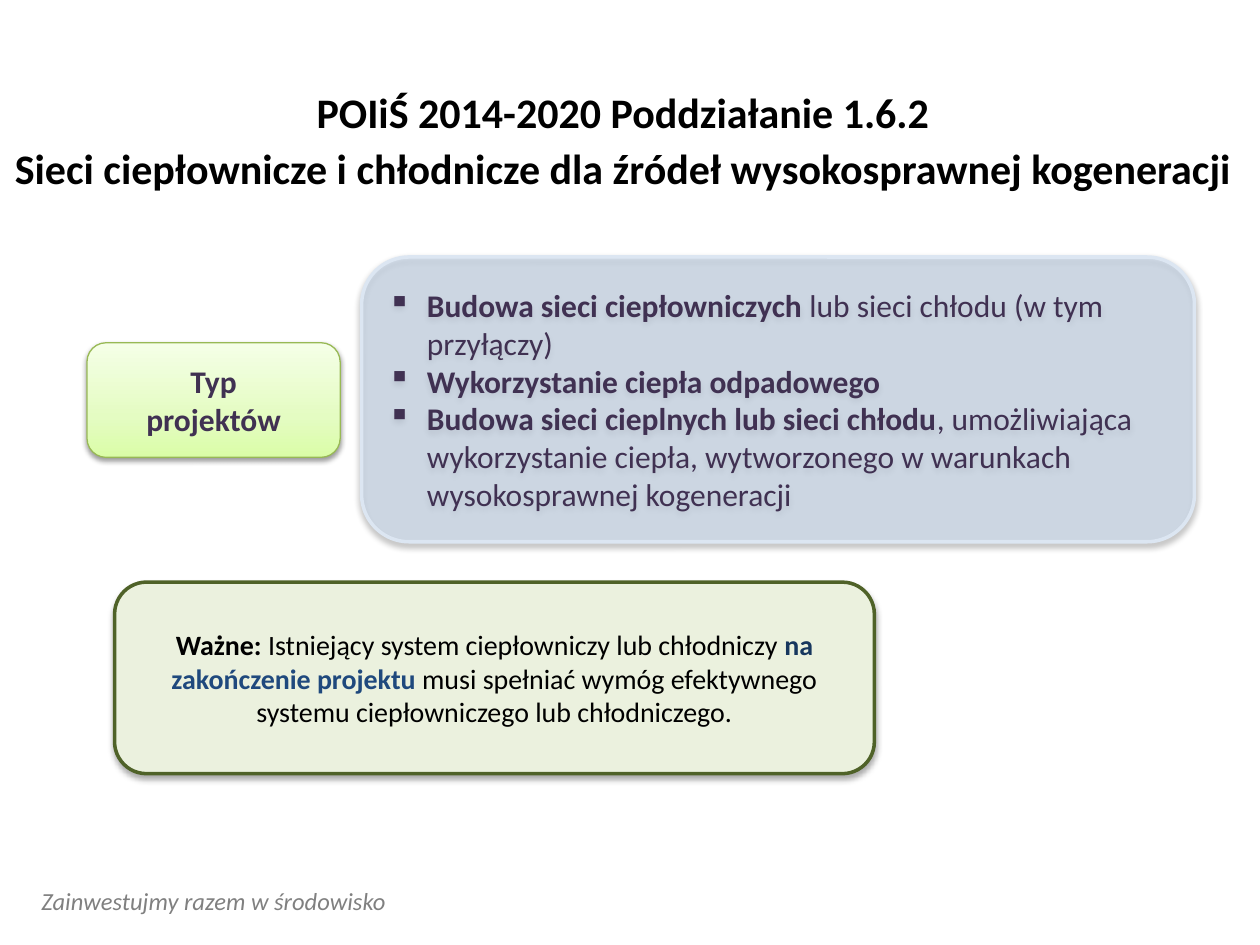
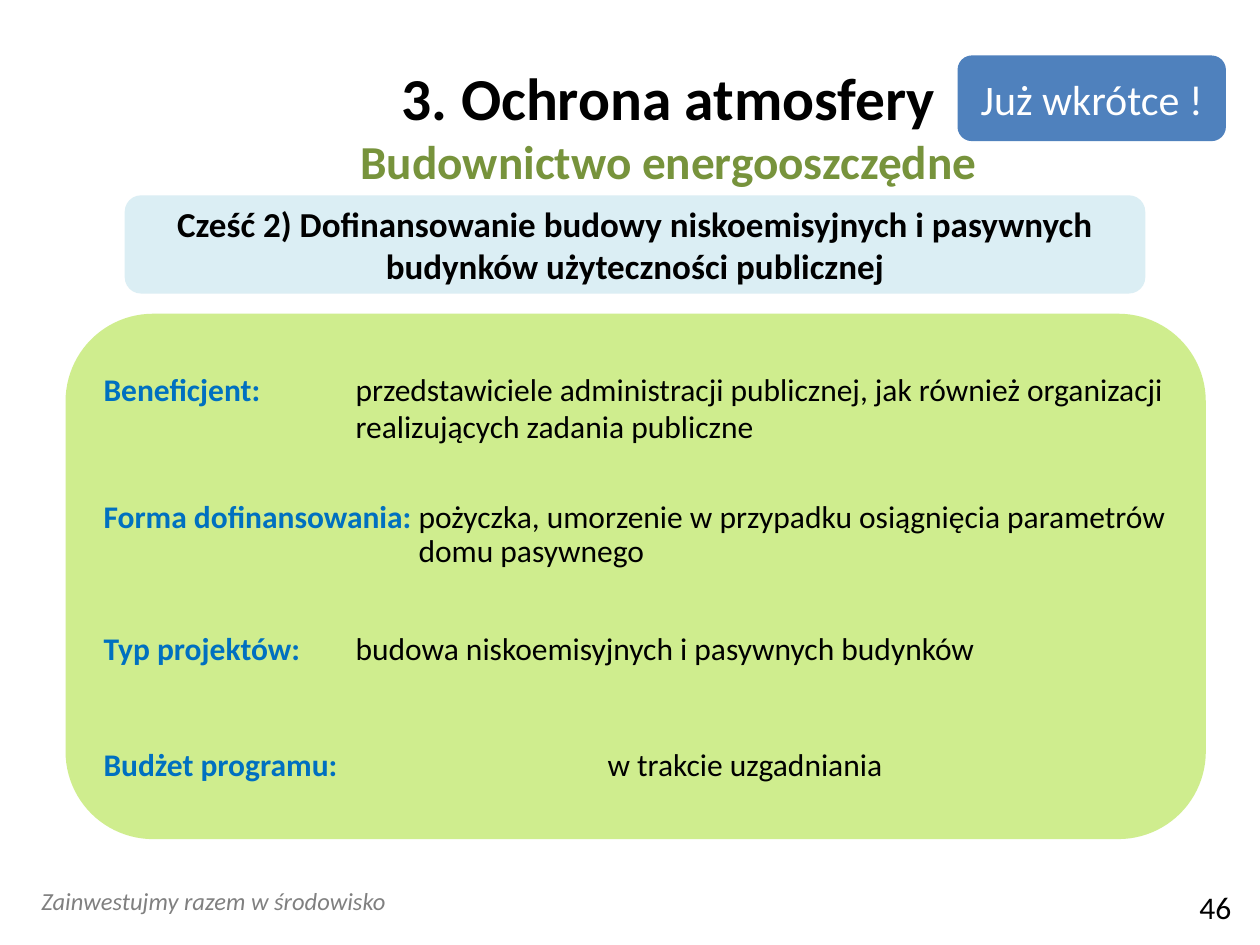
from copy import deepcopy

from lxml.etree import SubElement
from pptx import Presentation
from pptx.dml.color import RGBColor
from pptx.enum.shapes import MSO_SHAPE
from pptx.enum.text import MSO_ANCHOR, MSO_AUTO_SIZE, PP_ALIGN
from pptx.oxml.ns import qn
from pptx.util import Inches, Pt

BLACK = RGBColor(0x00, 0x00, 0x00)
WHITE = RGBColor(0xFF, 0xFF, 0xFF)
GREY = RGBColor(0x80, 0x80, 0x80)
PLUM = RGBColor(0x40, 0x31, 0x52)
NAVY = RGBColor(0x17, 0x37, 0x5E)
DARK_BLUE = RGBColor(0x1F, 0x49, 0x7D)
LABEL_BLUE = RGBColor(0x00, 0x70, 0xC0)
BADGE_BLUE = RGBColor(0x4F, 0x81, 0xBD)
MIST = RGBColor(0xC6, 0xD9, 0xF1)
MIST_EDGE = RGBColor(0xDC, 0xE6, 0xF2)
ICE = RGBColor(0xDB, 0xEE, 0xF4)
OLIVE = RGBColor(0x77, 0x93, 0x3C)
MOSS = RGBColor(0x4F, 0x62, 0x28)
SAGE = RGBColor(0xEB, 0xF1, 0xDE)
LIME = RGBColor(0xAF, 0xE1, 0x3F)
LEAF_EDGE = RGBColor(0x98, 0xB9, 0x55)
LEAF_STOPS = [
    (0, RGBColor(0xDA, 0xFD, 0xA7)),
    (0.35, RGBColor(0xE4, 0xFC, 0xC2)),
    (1, RGBColor(0xF5, 0xFF, 0xE7)),
]
SOFT_SHADOW = (38, 3.1, 1.6)
DEEP_SHADOW = (32, 3.5, 2.2)


class Deck:
    FONT = "Calibri"
    COLUMNS, ROWS = 100, 75
    MOTTO = "Zainwestujmy razem w środowisko"

    def __init__(self):
        self.deck = Presentation()
        self.deck.slide_width, self.deck.slide_height = Inches(10), Inches(7.5)
        self.slide = None

    def place(self, left, top, width, height):
        column = self.deck.slide_width / self.COLUMNS
        row = self.deck.slide_height / self.ROWS
        return [round(n) for n in (left * column, top * row, width * column, height * row)]

    def new_slide(self):
        self.slide = self.deck.slides.add_slide(self.deck.slide_layouts[5])
        self.label((2.3, 69.8, 42.2, 3.4), self.MOTTO, 14, GREY, italic=True)

    def style(self, run, size, color=BLACK, bold=False, italic=False):
        font = run.font
        font.name, font.size = self.FONT, Pt(size)
        font.bold, font.italic = bold, italic
        font.color.rgb = color

    def paragraph(self, frame, runs, size, align=PP_ALIGN.LEFT, hang=0, bullet=None,
                  before=0, after=0, spacing=1.0):
        first = not frame.paragraphs[0].runs
        line = frame.paragraphs[0] if first else frame.add_paragraph()
        line.alignment, line.line_spacing = align, spacing
        line.space_before, line.space_after = Pt(before), Pt(after)
        properties = line._p.get_or_add_pPr()
        if hang:
            properties.set("marL", str(Inches(hang)))
            properties.set("indent", str(-Inches(hang)))
        if bullet:
            SubElement(properties, qn("a:buChar")).set("char", bullet)
        for text, color, bold in runs:
            run = line.add_run()
            run.text = text
            self.style(run, size, color, bold)

    def title(self, box, lines, anchor, **layout):
        heading = self.slide.shapes.title
        heading.left, heading.top, heading.width, heading.height = self.place(*box)
        frame = heading.text_frame
        frame.word_wrap, frame.auto_size = True, MSO_AUTO_SIZE.NONE
        frame.vertical_anchor = anchor
        for text, size, color in lines:
            self.paragraph(frame, [(text, color, True)], size, PP_ALIGN.CENTER, **layout)

    def label(self, box, text, size, color=BLACK, italic=False):
        frame = self.slide.shapes.add_textbox(*self.place(*box)).text_frame
        frame.word_wrap = True
        frame.text = text
        self.style(frame.paragraphs[0].runs[0], size, color, italic=italic)

    def panel(self, box, fill, edge=None, edge_width=2, opacity=None, shadow=None):
        shape = self.slide.shapes.add_shape(MSO_SHAPE.ROUNDED_RECTANGLE, *self.place(*box))
        if isinstance(fill, list):
            self.gradient(shape, fill)
        else:
            shape.fill.solid()
            shape.fill.fore_color.rgb = fill
        if opacity:
            tint = shape.element.spPr.find(".//" + qn("a:srgbClr"))
            SubElement(tint, qn("a:alpha")).set("val", str(opacity * 1000))
        if edge is None:
            shape.line.fill.background()
        else:
            shape.line.color.rgb, shape.line.width = edge, Pt(edge_width)
        shape.shadow.inherit = False
        if shadow:
            self.cast_shadow(shape, *shadow)
        frame = shape.text_frame
        frame.word_wrap, frame.vertical_anchor = True, MSO_ANCHOR.MIDDLE
        return frame

    def gradient(self, shape, stops):
        shape.fill.gradient()
        shape.fill.gradient_angle = 90
        stop_list = shape.element.spPr.find(".//" + qn("a:gsLst"))
        stop_list.insert(1, deepcopy(stop_list[0]))
        for stop, (position, color) in zip(shape.fill.gradient_stops, stops):
            stop.position, stop.color.rgb = position, color

    def cast_shadow(self, shape, opacity, blur, distance):
        effects = shape.element.spPr.find(qn("a:effectLst"))
        outer = SubElement(effects, qn("a:outerShdw"), blurRad=str(Pt(blur)),
                           dist=str(Pt(distance)), dir="5400000", rotWithShape="0")
        tint = SubElement(outer, qn("a:srgbClr"), val=str(BLACK))
        SubElement(tint, qn("a:alpha"), val=str(opacity * 1000))


def heating_networks(deck):
    deck.new_slide()
    headings = [
        "POIiŚ 2014-2020 Poddziałanie 1.6.2",
        "Sieci ciepłownicze i chłodnicze dla źródeł wysokosprawnej kogeneracji",
    ]
    deck.title((0, 6.8, 98.9, 9.1), [(text, 24, BLACK) for text in headings],
               MSO_ANCHOR.TOP, spacing=0.9, after=6)

    project_type = deck.panel((6.9, 27.2, 20.1, 9.1), LEAF_STOPS, LEAF_EDGE, 0.75,
                              shadow=SOFT_SHADOW)
    for word in ("Typ", "projektów"):
        deck.paragraph(project_type, [(word, PLUM, True)], 18, PP_ALIGN.CENTER)

    projects = deck.panel((28.7, 20.4, 66.1, 22.6), MIST, MIST_EDGE, opacity=51,
                          shadow=DEEP_SHADOW)
    for lead, rest in [
        ("Budowa sieci ciepłowniczych ", "lub sieci chłodu (w tym przyłączy)"),
        ("Wykorzystanie ciepła odpadowego", ""),
        ("Budowa sieci cieplnych lub sieci chłodu",
         ", umożliwiająca wykorzystanie ciepła, wytworzonego w warunkach "
         "wysokosprawnej kogeneracji"),
    ]:
        runs = [(lead, PLUM, True)] + ([(rest, PLUM, False)] if rest else [])
        deck.paragraph(projects, runs, 18, hang=0.31, bullet="▪")

    requirement = deck.panel((9.1, 46.2, 60.3, 15.2), SAGE, MOSS, shadow=DEEP_SHADOW)
    deck.paragraph(requirement, [
        ("Ważne: ", BLACK, True),
        ("Istniejący system ciepłowniczy lub chłodniczy ", BLACK, False),
        ("na ", NAVY, True),
        ("zakończenie projektu ", DARK_BLUE, True),
        ("musi spełniać wymóg efektywnego systemu ciepłowniczego lub chłodniczego.",
         BLACK, False),
    ], 16, PP_ALIGN.CENTER)


def efficient_buildings(deck):
    deck.new_slide()
    deck.title((11.4, 3.7, 83.3, 12.5),
               [("3. Ochrona atmosfery", 34, BLACK),
                ("Budownictwo energooszczędne", 27, OLIVE)], MSO_ANCHOR.MIDDLE)

    programme = deck.panel((5.2, 24.9, 90.5, 41.7), LIME, opacity=59)
    for name, value, hang, before, spacing in [
        ("Beneficjent:", "przedstawiciele administracji publicznej, jak również "
         "organizacji realizujących zadania publiczne", 2, 0, 1.0),
        ("Forma dofinansowania:", "pożyczka, umorzenie w przypadku osiągnięcia "
         "parametrów domu pasywnego", 2.5, 32, 0.9),
        ("Typ projektów:", "budowa niskoemisyjnych i pasywnych budynków", 2, 34, 1.0),
        ("Budżet programu:", "w trakcie uzgadniania", 4, 45, 1.0),
    ]:
        deck.paragraph(programme, [(name + "\t", LABEL_BLUE, True), (value, BLACK, False)],
                       18, hang=hang, before=before, spacing=spacing)

    deck.label((94.2, 70, 5.9, 2.9), "46", 18)

    part = deck.panel((9.9, 15.5, 81, 7.8), ICE)
    deck.paragraph(part, [("Cześć 2) Dofinansowanie budowy niskoemisyjnych i pasywnych "
                           "budynków użyteczności publicznej", BLACK, True)],
                   20, PP_ALIGN.CENTER)

    soon = deck.panel((76, 4.4, 21.3, 6.8), BADGE_BLUE)
    deck.paragraph(soon, [("Już wkrótce !", WHITE, False)], 24, PP_ALIGN.CENTER)


def main():
    deck = Deck()
    heating_networks(deck)
    efficient_buildings(deck)
    deck.deck.save("out.pptx")


if __name__ == "__main__":
    main()
